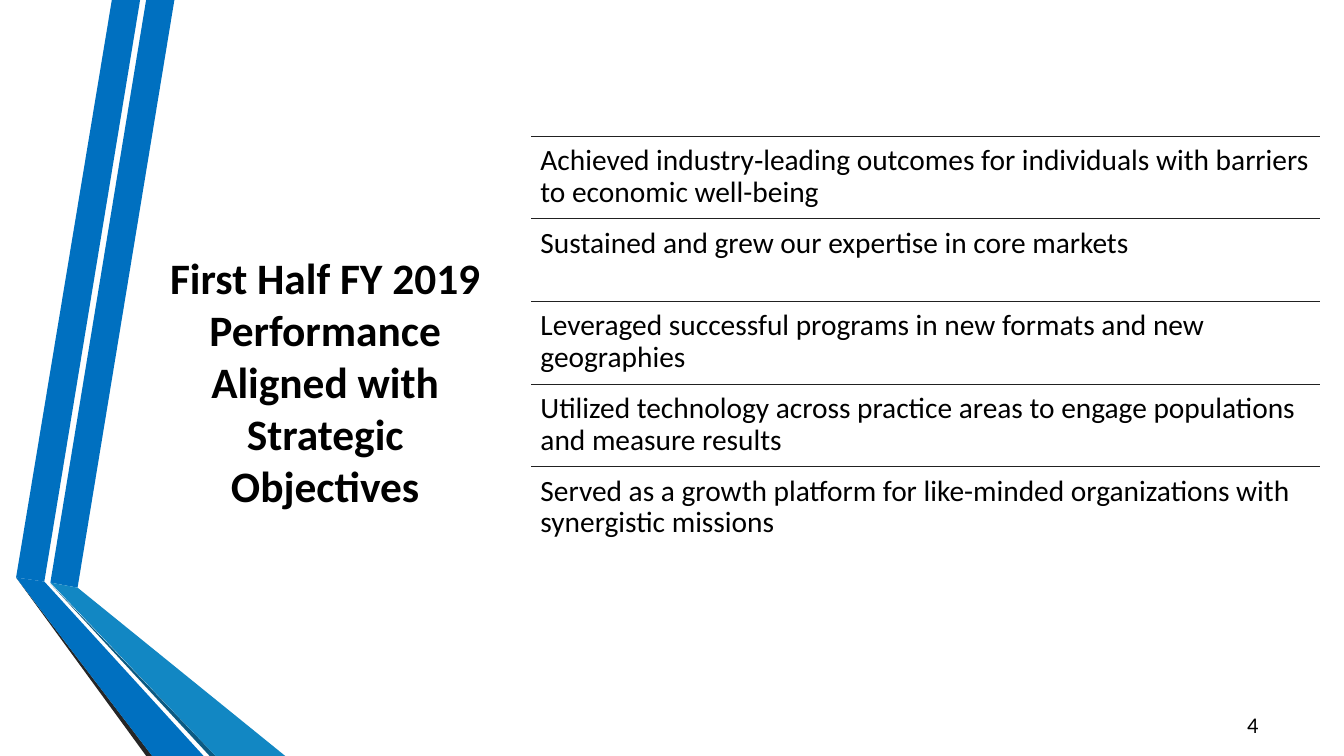
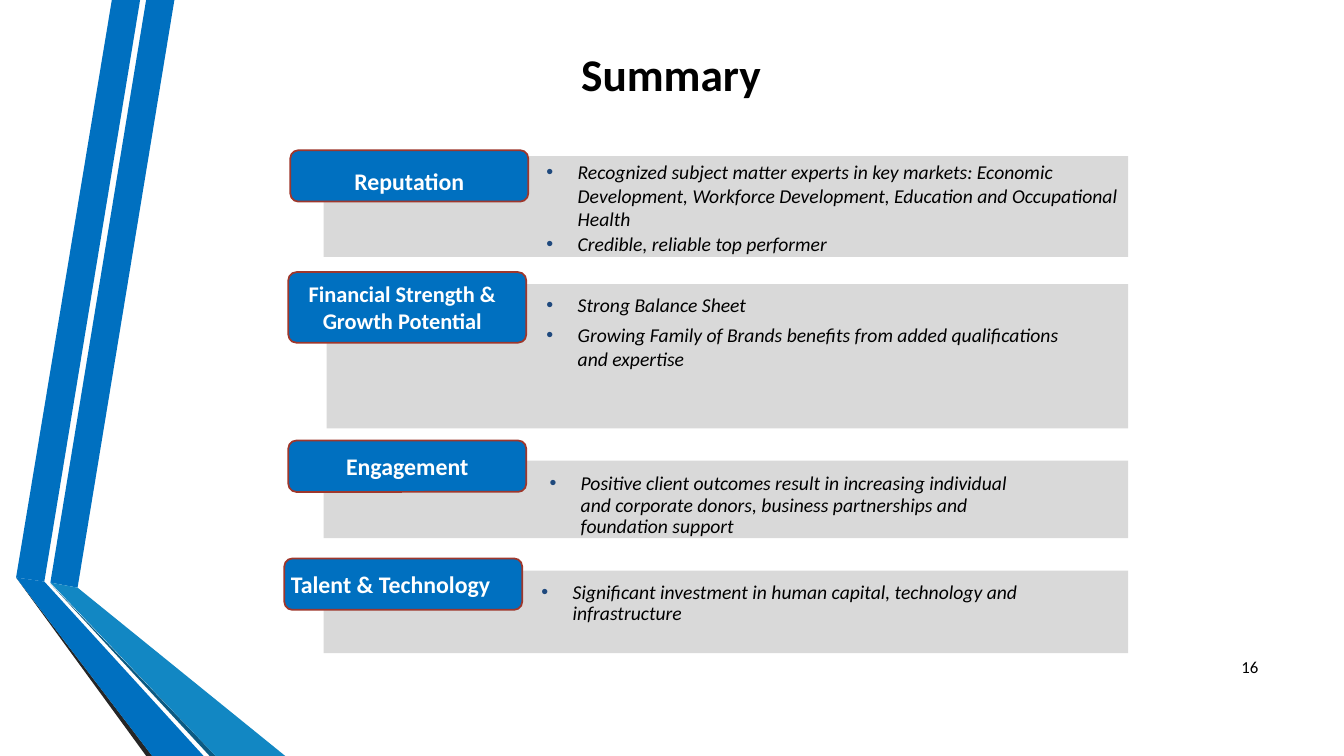
import pptx
import pptx.dml.color
import pptx.enum.shapes
import pptx.enum.text
import pptx.oxml
import pptx.oxml.ns
import pptx.util
from dataclasses import dataclass

Inches = pptx.util.Inches
Pt = pptx.util.Pt
ALIGN = pptx.enum.text.PP_ALIGN
ANCHOR = pptx.enum.text.MSO_ANCHOR
SHAPE = pptx.enum.shapes.MSO_SHAPE


@dataclass(frozen=True)
class Theme:
    font: str = "Calibri"
    text: str = "000000"
    white: str = "FFFFFF"
    blue: str = "0070C0"
    light_blue: str = "1287C3"
    deep_blue: str = "0C5A82"
    dark: str = "262626"
    rule: str = "212121"
    panel: str = "D9D9D9"
    tab_line: str = "9E372C"
    bullet: str = "1F497D"
    title_size: float = 31
    summary_size: float = 32.4
    list_size: float = 21
    tab_size: float = 17
    tab_small_size: float = 16
    body_size: float = 14


THEME = Theme()
SLIDE_WIDTH, SLIDE_HEIGHT = 13.33, 7.5

RIBBONS = [
    (THEME.blue, [(0.5, 5.78), (0.77, 5.83), (1.73, 0), (1.45, 0)]),
    (THEME.blue, [(1.39, 0), (1.11, 0), (0.16, 5.73), (0.44, 5.77)]),
    (THEME.dark, [(0.16, 5.73), (1.45, 7.5), (1.51, 7.5)]),
    (THEME.deep_blue, [(0.5, 5.79), (2.08, 7.5), (2.14, 7.5)]),
    (THEME.light_blue, [(0.5, 5.78), (2.14, 7.5), (2.83, 7.5), (0.77, 5.83)]),
    (THEME.blue, [(2.02, 7.5), (0.44, 5.77), (0.16, 5.73), (1.51, 7.5)]),
]

OBJECTIVES_TITLE = "First Half FY 2019 Performance Aligned with Strategic Objectives"
OBJECTIVES = [
    "Achieved industry‐leading outcomes for individuals with barriers to economic well-being",
    "Sustained and grew our expertise in core markets",
    "Leveraged successful programs in new formats and new geographies",
    "Utilized technology across practice areas to engage populations and measure results",
    "Served as a growth platform for like-minded organizations with synergistic missions",
]
LIST_LEFT, LIST_TOP, LIST_WIDTH, LIST_ROW = 5.27, 1.35, 7.82, 0.82

SUMMARY_TITLE = "Summary"
PANEL_RIGHT, TAB_WIDTH, TAB_RADIUS, HANGING = 11.19, 2.36, 0.08, 0.31
# panel: left, top, height; tab: left, top, height; text: left, top, right;
# tab_inset: top, right
SUMMARY = [
    dict(label="Reputation", size=THEME.tab_size,
         panel=(3.21, 1.55, 1.0), tab=(2.88, 1.49, 0.51), tab_inset=(0.1, 0),
         text=(5.73, 1.59, 11.19), spacing=[(0, None), (4, Pt(13.6))],
         bullets=["Recognized subject matter experts in key markets: Economic Development, "
                  "Workforce Development, Education and Occupational Health",
                  "Credible, reliable top performer"]),
    dict(label="Financial Strength & Growth Potential", size=THEME.tab_small_size,
         panel=(3.24, 2.82, 1.43), tab=(2.86, 2.7, 0.7), tab_inset=(0, 0.1),
         text=(5.73, 2.91, 10.61), spacing=[(0, None), (4.3, None)],
         bullets=["Strong Balance Sheet",
                  "Growing Family of Brands benefits from added qualifications and expertise"]),
    dict(label="Engagement", size=THEME.tab_size,
         panel=(3.21, 4.57, 0.77), tab=(2.86, 4.37, 0.51), tab_inset=(0, 0),
         text=(5.76, 4.7, 10.1), spacing=[(0, Pt(15.1))],
         bullets=["Positive client outcomes result in increasing individual and corporate "
                  "donors, business partnerships and foundation support"]),
    dict(label="Talent & Technology", size=THEME.tab_size,
         panel=(3.21, 5.66, 0.82), tab=(2.82, 5.54, 0.51), tab_inset=(0, 0.25),
         text=(5.68, 5.78, 10.6), spacing=[(0, Pt(15.1))],
         bullets=["Significant investment in human capital, technology and infrastructure"]),
]


def rgb(color):
    return pptx.dml.color.RGBColor.from_string(color)


def paint(shape, fill, line=None):
    shape.shadow.inherit = False
    shape.fill.solid()
    shape.fill.fore_color.rgb = rgb(fill)
    if line:
        shape.line.color.rgb = rgb(line)
        shape.line.width = Pt(1.25)
    else:
        shape.line.fill.background()


def write(shape, lines, size, color=THEME.text, align=ALIGN.LEFT, anchor=ANCHOR.TOP,
          insets=(0.1, 0.05, 0.1, 0.05), bold=False, italic=False):
    """Fill a shape with one paragraph per line; insets run left, top, right, bottom."""
    frame = shape.text_frame
    frame.word_wrap = True
    frame.vertical_anchor = anchor
    (frame.margin_left, frame.margin_top,
     frame.margin_right, frame.margin_bottom) = map(Inches, insets)
    frame.text = "\n".join(lines)
    for paragraph in frame.paragraphs:
        paragraph.alignment = align
        for run in paragraph.runs:
            run.font.name = THEME.font
            run.font.size = Pt(size)
            run.font.bold = bold
            run.font.italic = italic
            run.font.color.rgb = rgb(color)
    return frame.paragraphs


def add_text(slide, box, text, size, **style):
    shape = slide.shapes.add_textbox(*map(Inches, box))
    return write(shape, [text], size, **style)[0]


def add_title(slide, box, text, size):
    add_text(slide, box, text, size, align=ALIGN.CENTER, anchor=ANCHOR.MIDDLE, bold=True)


def add_page_number(slide, top, number, size):
    add_text(slide, (11.98, top, 0.6, 0.4), number, size,
             align=ALIGN.RIGHT, anchor=ANCHOR.MIDDLE)


def add_bullet(paragraph):
    properties = paragraph._p.get_or_add_pPr()
    properties.set("marL", str(Inches(HANGING)))
    properties.set("indent", str(-Inches(HANGING)))
    namespace = pptx.oxml.ns.nsdecls("a")
    for xml in (f'<a:buClr {namespace}><a:srgbClr val="{THEME.bullet}"/></a:buClr>',
                f'<a:buFont {namespace} typeface="Arial"/>',
                f'<a:buChar {namespace} char="•"/>'):
        properties.append(pptx.oxml.parse_xml(xml))


def add_rule(slide, left, top, width):
    rule = slide.shapes.add_connector(
        pptx.enum.shapes.MSO_CONNECTOR.STRAIGHT,
        Inches(left), Inches(top), Inches(left + width), Inches(top))
    rule.line.color.rgb = rgb(THEME.rule)
    rule.line.width = Pt(0.75)
    rule.element.spPr.append(
        pptx.oxml.parse_xml(f'<a:effectLst {pptx.oxml.ns.nsdecls("a")}/>'))


def decorate_layout(layout, slide):
    """Draw the ribbons on a slide and move them to the layout that all slides share."""
    for placeholder in list(layout.placeholders):
        layout.shapes.element.remove(placeholder.element)
    for color, points in RIBBONS:
        start, *others = [(Inches(x), Inches(y)) for x, y in points]
        builder = slide.shapes.build_freeform(*start)
        builder.add_line_segments(others, close=True)
        ribbon = builder.convert_to_shape()
        paint(ribbon, color)
        layout.shapes.element.append(ribbon.element)


def build_objectives(slide):
    add_title(slide, (1.46, 0.75, 3.53, 6.06), OBJECTIVES_TITLE, THEME.title_size)
    for index, objective in enumerate(OBJECTIVES):
        top = LIST_TOP + index * LIST_ROW
        add_rule(slide, LIST_LEFT, top, LIST_WIDTH)
        paragraph = add_text(slide, (LIST_LEFT, top, LIST_WIDTH, LIST_ROW), objective,
                             THEME.list_size, insets=(0.09,) * 4)
        paragraph.line_spacing = 0.9
    add_page_number(slide, 6.99, "4", 16)


def add_summary_row(slide, row):
    left, top, height = row["panel"]
    panel = slide.shapes.add_shape(SHAPE.RECTANGLE, *map(
        Inches, (left, top, PANEL_RIGHT - left, height)))
    paint(panel, THEME.panel)
    text_left, text_top, text_right = row["text"]
    insets = (text_left - HANGING - left, text_top - top, PANEL_RIGHT - text_right, 0)
    paragraphs = write(panel, row["bullets"], THEME.body_size, insets=insets, italic=True)
    for paragraph, (before, line_spacing) in zip(paragraphs, row["spacing"]):
        paragraph.space_before = Pt(before)
        paragraph.line_spacing = line_spacing
        add_bullet(paragraph)

    left, top, height = row["tab"]
    tab = slide.shapes.add_shape(SHAPE.ROUNDED_RECTANGLE, *map(
        Inches, (left, top, TAB_WIDTH, height)))
    tab.adjustments[0] = TAB_RADIUS / height
    paint(tab, THEME.blue, THEME.tab_line)
    inset_top, inset_right = row["tab_inset"]
    write(tab, [row["label"]], row["size"], color=THEME.white, align=ALIGN.CENTER,
          anchor=ANCHOR.MIDDLE, insets=(0, inset_top, inset_right, 0), bold=True)


def build_summary(slide):
    add_title(slide, (5.18, 0.38, 2.95, 0.69), SUMMARY_TITLE, THEME.summary_size)
    for row in SUMMARY:
        add_summary_row(slide, row)
    add_page_number(slide, 6.42, "16", 12)


def main():
    presentation = pptx.Presentation()
    presentation.slide_width = Inches(SLIDE_WIDTH)
    presentation.slide_height = Inches(SLIDE_HEIGHT)
    blank = presentation.slide_layouts[6]
    objectives_slide = presentation.slides.add_slide(blank)
    decorate_layout(blank, objectives_slide)
    build_objectives(objectives_slide)
    build_summary(presentation.slides.add_slide(blank))
    presentation.save("out.pptx")


if __name__ == "__main__":
    main()
